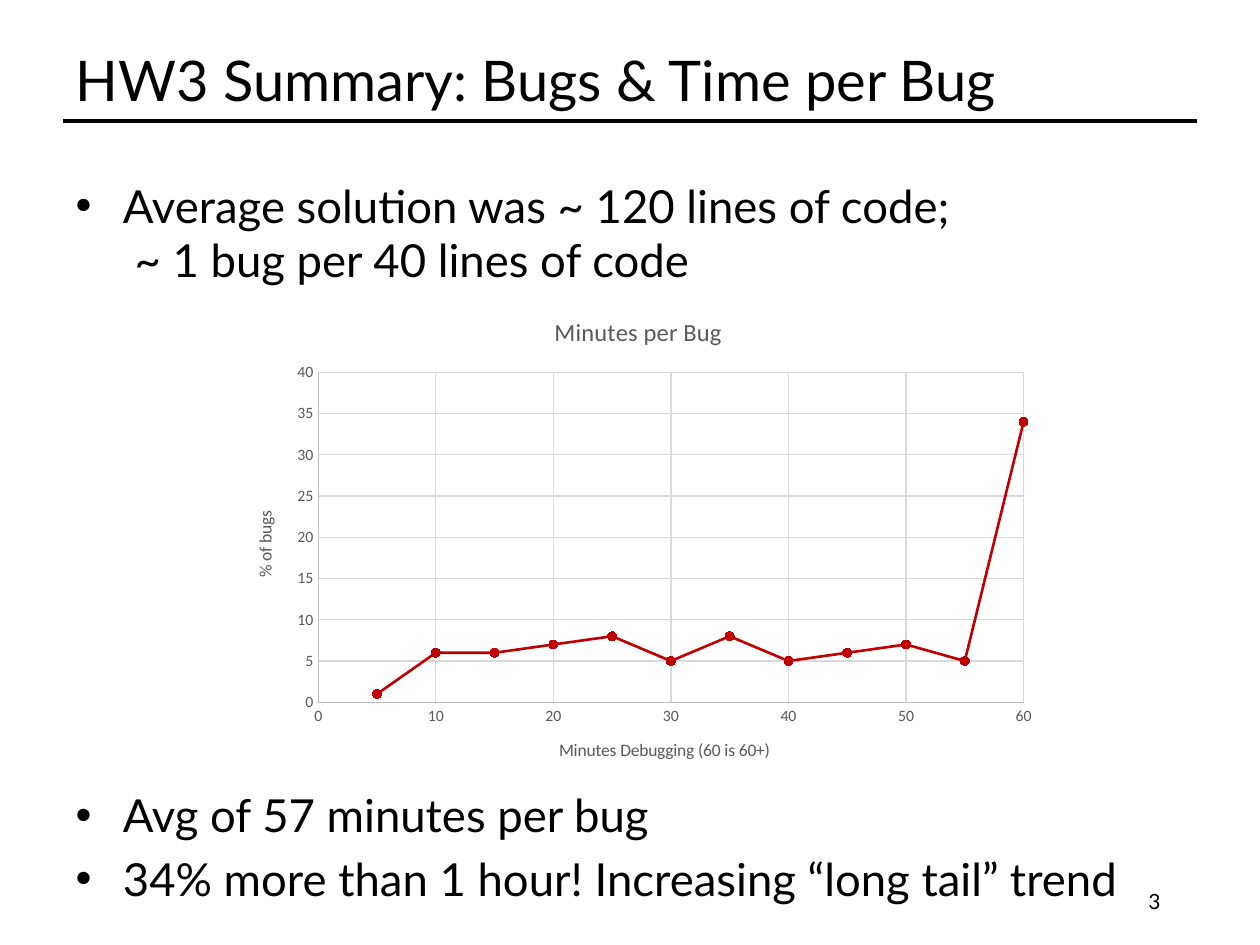
from dataclasses import dataclass

from lxml.etree import SubElement as Sub
from pptx import Presentation
from pptx.chart.data import XyChartData
from pptx.dml.color import RGBColor
from pptx.enum.chart import XL_CHART_TYPE as Kind
from pptx.enum.chart import XL_MARKER_STYLE as Mark
from pptx.enum.chart import XL_TICK_MARK as Tick
from pptx.enum.shapes import MSO_CONNECTOR as Link
from pptx.enum.text import MSO_ANCHOR as Anchor
from pptx.enum.text import MSO_AUTO_SIZE as Fit
from pptx.enum.text import PP_ALIGN as Align
from pptx.oxml.ns import qn
from pptx.util import Inches, Pt

BLACK, GRAY, RED = "000000", "595959", "C00000"


@dataclass
class Box:
    left: float
    top: float
    width: float
    height: float

    def sizes(self) -> list:
        return [Inches(n) for n in (self.left, self.top, self.width, self.height)]


@dataclass
class Scale:
    title: str
    top: int
    step: int


def tint(color, code: str) -> None:
    color.rgb = RGBColor.from_string(code)


def style(font, size: float, code: str = BLACK, name: str = "Lato") -> None:
    font.size, font.name, font.bold = Pt(size), name, False
    tint(font.color, code)


def stroke(line, code: str, width: float) -> None:
    tint(line.color, code)
    line.width = Pt(width)


def place(shape, box: Box) -> None:
    shape.left, shape.top, shape.width, shape.height = box.sizes()


def write(shape, lines: list[str], size: float, align=Align.LEFT) -> None:
    frame = shape.text_frame
    frame.word_wrap, frame.auto_size = True, Fit.NONE
    frame.text = "\n".join(lines)
    for para in frame.paragraphs:
        para.alignment = align
        for run in para.runs:
            style(run.font, size)


def label(owner, text: str, size: float) -> None:
    frame = owner.text_frame
    frame.text = text
    style(frame.paragraphs[0].runs[0].font, size, GRAY, "Calibri")


def set_axis(axis, scale: Scale) -> None:
    axis.minimum_scale, axis.maximum_scale = 0, scale.top
    axis.major_unit = scale.step
    axis.major_tick_mark = axis.minor_tick_mark = Tick.NONE
    axis.has_major_gridlines = True
    stroke(axis.major_gridlines.format.line, "D9D9D9", 0.75)
    stroke(axis.format.line, "BFBFBF", 0.75)
    style(axis.tick_labels.font, 9, GRAY, "Calibri")
    label(axis.axis_title, scale.title, 10)


def set_plot(chart, box: Box) -> None:
    """Fix the inner plot area, in fractions of the chart."""
    area = chart._chartSpace.find(".//" + qn("c:plotArea"))
    for old in area.findall(qn("c:layout")):
        area.remove(old)
    layout = area.makeelement(qn("c:layout"), {})
    area.insert(0, layout)
    manual = Sub(layout, qn("c:manualLayout"))
    parts = dict(layoutTarget="inner", xMode="edge", yMode="edge",
                 x=box.left, y=box.top, w=box.width, h=box.height)
    for tag, value in parts.items():
        Sub(manual, qn("c:" + tag)).set("val", str(value))


def add_plot(slide, box: Box, values: list[float]) -> None:
    data = XyChartData()
    points = data.add_series("Series 1")
    for step, value in enumerate(values, 1):
        points.add_data_point(5 * step, value)
    chart = slide.shapes.add_chart(Kind.XY_SCATTER_SMOOTH, *box.sizes(), data).chart
    style(chart.font, 10, BLACK, "Calibri")
    chart.has_legend = False
    chart.has_title = True
    label(chart.chart_title, "Minutes per Bug", 14)
    set_axis(chart.category_axis, Scale("Minutes Debugging (60 is 60+)", 60, 10))
    set_axis(chart.value_axis, Scale("% of bugs", 40, 5))
    set_plot(chart, Box(0.11, 0.16, 0.86, 0.67))

    plot = chart.plots[0]
    plot.vary_by_categories = False
    curve = plot.series[0]
    curve.smooth = True
    stroke(curve.format.line, RED, 1.5)
    curve.marker.style, curve.marker.size = Mark.CIRCLE, 5
    curve.marker.format.fill.solid()
    tint(curve.marker.format.fill.fore_color, RED)
    stroke(curve.marker.format.line, RED, 0.75)


def main() -> None:
    deck = Presentation()
    deck.slide_width, deck.slide_height = Inches(10), Inches(7.5)
    slide = deck.slides.add_slide(deck.slide_layouts[1])
    title, body = slide.placeholders

    # Title and rule
    place(title, Box(0.5, 0.3, 9, 0.66))
    write(title, ["HW3 Summary: Bugs & Time per Bug"], 32)
    rule = slide.shapes.add_connector(
        Link.STRAIGHT, Inches(0.5), Inches(0.96), Inches(9.5), Inches(0.96))
    stroke(rule.line, BLACK, 2)
    Sub(rule._element.spPr, qn("a:effectLst"))

    # Bullets, with room for the chart after the first
    place(body, Box(0.5, 1.36, 9.14, 5.59))
    write(body, [
        "Average solution was ~ 120 lines of code;\v ~ 1 bug per 40 lines of code",
        "Avg of 57 minutes per bug",
        "34% more than 1 hour! Increasing “long tail” trend",
    ], 26)
    for para, gap in zip(body.text_frame.paragraphs, (0, 286, 5.2)):
        para.space_before = Pt(gap)

    # Slide number
    number = slide.shapes.add_textbox(*Box(7.06, 6.95, 2.25, 0.4).sizes())
    write(number, ["3"], 12, Align.RIGHT)
    number.text_frame.vertical_anchor = Anchor.MIDDLE

    # Chart
    add_plot(slide, Box(1.81, 2.33, 6.51, 3.91),
             [1, 6, 6, 7, 8, 5, 8, 5, 6, 7, 5, 34])
    deck.save("out.pptx")


if __name__ == "__main__":
    main()
